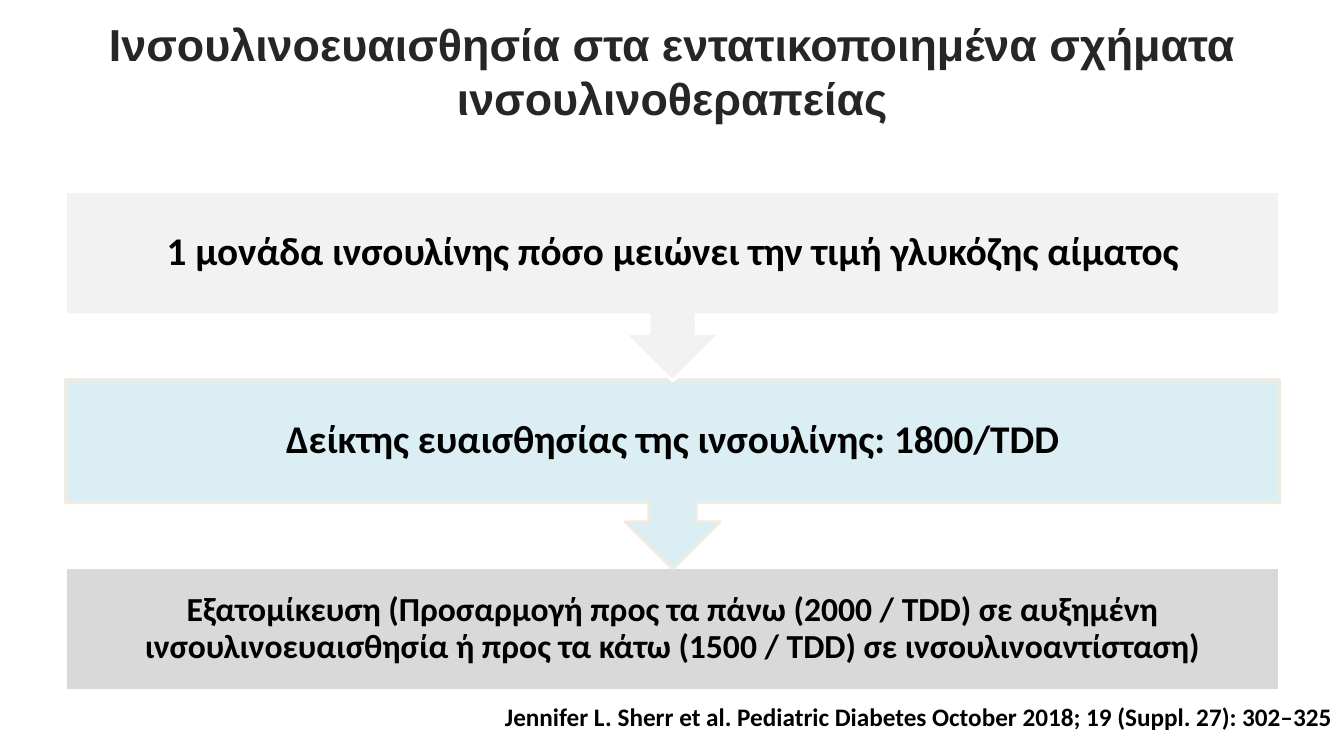
from dataclasses import dataclass

from pptx import Presentation
from pptx.dml.color import RGBColor
from pptx.enum.shapes import MSO_SHAPE
from pptx.enum.text import MSO_ANCHOR, MSO_AUTO_SIZE, PP_ALIGN
from pptx.shapes.autoshape import Shape
from pptx.slide import Slide
from pptx.text.text import TextFrame
from pptx.util import Inches, Pt


@dataclass(frozen=True)
class Theme:
    heading_font: str = "Arial"
    body_font: str = "Calibri"
    heading: str = "262626"
    ink: str = "000000"
    white: str = "FFFFFF"
    cream: str = "EEECE1"
    pale_grey: str = "F2F2F2"
    pale_blue: str = "DBEEF4"
    grey: str = "D9D9D9"
    title_size: int = 32
    step_size: int = 28
    detail_size: int = 24
    source_size: int = 18
    border: int = 2


@dataclass(frozen=True)
class Step:
    text: str
    fill: str
    line: str
    size: int
    inset: float
    has_arrow: bool = True


THEME = Theme()

# Grid of the flow, in inches
LEFT, TOP, WIDTH = 0.65, 1.9, 12.04
LAST_TOP, BOX_HEIGHT, CALLOUT_HEIGHT = 5.63, 1.22, 1.88

STEPS = [
    Step("1 μονάδα ινσουλίνης πόσο μειώνει την τιμή γλυκόζης αίματος",
         THEME.pale_grey, THEME.white, THEME.step_size, 0.22),
    Step("Δείκτης ευαισθησίας της ινσουλίνης: 1800/ΤDD",
         THEME.pale_blue, THEME.cream, THEME.step_size, 0.22),
    Step("Εξατομίκευση (Προσαρμογή προς τα πάνω (2000 / TDD) σε αυξημένη "
         "ινσουλινοευαισθησία ή προς τα κάτω (1500 / TDD) σε ινσουλινοαντίσταση)",
         THEME.grey, THEME.white, THEME.detail_size, 0.19, has_arrow=False),
]
ROW_PITCH = (LAST_TOP - TOP) / (len(STEPS) - 1)


def write(tf: TextFrame, text: str, size: int, align: PP_ALIGN,
          font: str = THEME.body_font, color: str = THEME.ink) -> None:
    """Put one bold run in the frame, centred vertically."""
    tf.word_wrap = True
    tf.auto_size = MSO_AUTO_SIZE.NONE
    tf.vertical_anchor = MSO_ANCHOR.MIDDLE
    p = tf.paragraphs[0]
    p.alignment = align
    r = p.add_run()
    r.text = text
    r.font.name = font
    r.font.size = Pt(size)
    r.font.bold = True
    r.font.color.rgb = RGBColor.from_string(color)


def add_block(s: Slide, kind: MSO_SHAPE, left: float, top: float, width: float,
              height: float, fill: str, line: str) -> Shape:
    sp = s.shapes.add_shape(kind, Inches(left), Inches(top), Inches(width), Inches(height))
    sp.shadow.inherit = False
    sp.fill.solid()
    sp.fill.fore_color.rgb = RGBColor.from_string(fill)
    sp.line.color.rgb = RGBColor.from_string(line)
    sp.line.width = Pt(THEME.border)
    return sp


def add_step(s: Slide, step: Step, row: int) -> None:
    top = TOP + row * ROW_PITCH
    if step.has_arrow:
        sp = add_block(s, MSO_SHAPE.UP_ARROW_CALLOUT, LEFT, top, WIDTH, CALLOUT_HEIGHT,
                       step.fill, step.line)
        sp.rotation = 180
    else:
        add_block(s, MSO_SHAPE.RECTANGLE, LEFT, top, WIDTH, BOX_HEIGHT, step.fill, step.line)

    # Upright label over the body of the block
    label = s.shapes.add_textbox(Inches(LEFT), Inches(top), Inches(WIDTH), Inches(BOX_HEIGHT))
    tf = label.text_frame
    tf.margin_left = tf.margin_right = tf.margin_top = tf.margin_bottom = Inches(step.inset)
    write(tf, step.text, step.size, PP_ALIGN.CENTER)
    tf.paragraphs[0].line_spacing = 0.9


def main() -> None:
    prs = Presentation()
    prs.slide_width, prs.slide_height = Inches(13.33), Inches(7.5)
    s = prs.slides.add_slide(prs.slide_layouts[5])

    # Title
    title = s.shapes.title
    title.left, title.top = Inches(0.67), Inches(0.05)
    title.width, title.height = Inches(12), Inches(1.3)
    write(title.text_frame, "Ινσουλινοευαισθησία στα εντατικοποιημένα σχήματα ινσουλινοθεραπείας",
          THEME.title_size, PP_ALIGN.CENTER, THEME.heading_font, THEME.heading)

    # Flow, from the last step up so that each arrow tip lies on the next box
    for row, step in reversed(list(enumerate(STEPS))):
        add_step(s, step, row)

    # Source
    source = add_block(s, MSO_SHAPE.RECTANGLE, 4.91, 6.92, 8.42, 0.37, THEME.white, THEME.white)
    write(source.text_frame,
          "Jennifer L. Sherr et al. Pediatric Diabetes October 2018; 19 (Suppl. 27): 302–325",
          THEME.source_size, PP_ALIGN.LEFT)

    prs.save("out.pptx")


if __name__ == "__main__":
    main()
